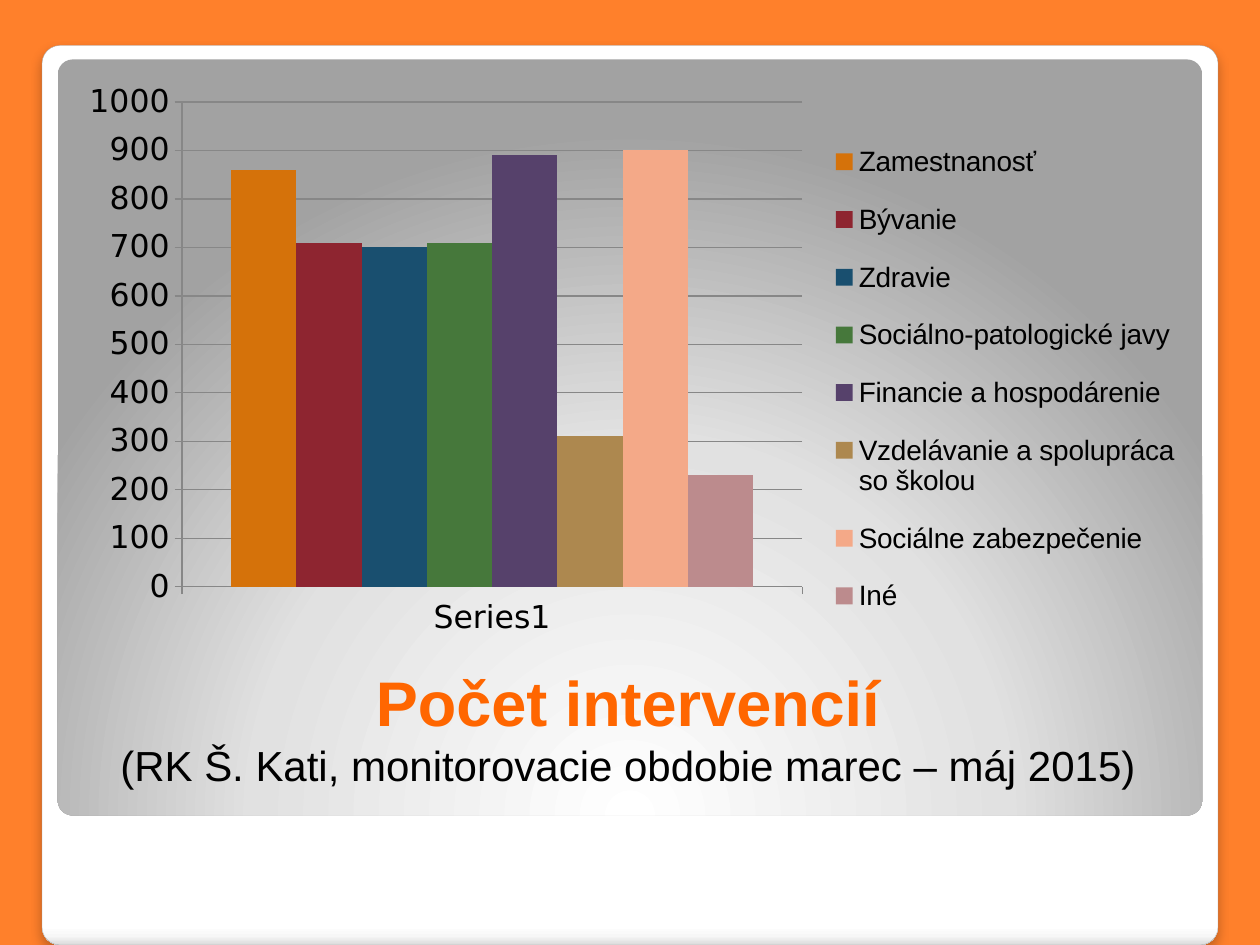
from lxml import etree
from pptx import Presentation
from pptx.chart.data import CategoryChartData
from pptx.dml.color import RGBColor
from pptx.enum.chart import XL_CHART_TYPE, XL_LEGEND_POSITION, XL_TICK_MARK
from pptx.enum.shapes import MSO_SHAPE
from pptx.enum.text import MSO_ANCHOR, MSO_AUTO_SIZE, PP_ALIGN
from pptx.oxml.ns import qn
from pptx.util import Pt

COLUMNS = XL_CHART_TYPE.COLUMN_CLUSTERED
LEGEND_RIGHT = XL_LEGEND_POSITION.RIGHT
TICK_OUTSIDE = XL_TICK_MARK.OUTSIDE
ROUNDED = MSO_SHAPE.ROUNDED_RECTANGLE
BOTTOM = MSO_ANCHOR.BOTTOM
NO_FIT = MSO_AUTO_SIZE.NONE
CENTER = PP_ALIGN.CENTER

BACKGROUND = RGBColor(0xFF, 0x80, 0x2B)
ORANGE = RGBColor(0xFF, 0x66, 0x00)
BLACK = RGBColor(0x00, 0x00, 0x00)
WHITE = RGBColor(0xFF, 0xFF, 0xFF)
FRAME_LINE = RGBColor(0xA4, 0xA4, 0xA4)
GRID_LINE = RGBColor(0x87, 0x87, 0x87)

FRAME_STOPS = [(0, WHITE), (98, WHITE), (99, RGBColor(0xF7, 0xF7, 0xF7)),
               (100, RGBColor(0xDA, 0xDA, 0xDA))]
PANEL_STOPS = [(0, WHITE), (55, RGBColor(0xE1, 0xE1, 0xE1)),
               (100, RGBColor(0xA2, 0xA2, 0xA2))]

INTERVENTIONS = [
    ("Zamestnanosť", 860, RGBColor(0xD5, 0x72, 0x0A)),
    ("Bývanie", 710, RGBColor(0x8E, 0x25, 0x30)),
    ("Zdravie", 700, RGBColor(0x19, 0x4F, 0x6F)),
    ("Sociálno-patologické javy", 710, RGBColor(0x46, 0x78, 0x3B)),
    ("Financie a hospodárenie", 890, RGBColor(0x56, 0x41, 0x6B)),
    ("Vzdelávanie a spolupráca so školou", 310, RGBColor(0xAD, 0x88, 0x4F)),
    ("Sociálne zabezpečenie", 900, RGBColor(0xF4, 0xA9, 0x88)),
    ("Iné", 230, RGBColor(0xBC, 0x8B, 0x8D)),
]


def add_node(parent, tag, **attributes):
    values = {name: str(value) for name, value in attributes.items()}
    return etree.SubElement(parent, qn(tag), values)


def add_color(parent, color, alpha=100):
    node = add_node(parent, "a:srgbClr", val=color)
    if alpha < 100:
        add_node(node, "a:alpha", val=alpha * 1000)


def set_gradient(shape, stops, focus=None):
    """Vertical gradient, or a circular one around the focus rectangle."""
    shape.fill.gradient()
    gradient = shape.element.spPr.find(qn("a:gradFill"))
    for child in list(gradient):
        gradient.remove(child)
    stop_list = add_node(gradient, "a:gsLst")
    for position, color in stops:
        add_color(add_node(stop_list, "a:gs", pos=position * 1000), color)
    if focus:
        circle = add_node(gradient, "a:path", path="circle")
        edges = {side: part * 1000 for side, part in zip("ltrb", focus)}
        add_node(circle, "a:fillToRect", **edges)
    else:
        add_node(gradient, "a:lin", ang=90 * 60000, scaled=0)


def add_rounded_box(page, box, stops, focus=None):
    shape = page.shapes.add_shape(ROUNDED, *map(Pt, box))
    shape.adjustments[0] = 0.02
    shape.shadow.inherit = False
    shape.line.fill.background()
    set_gradient(shape, stops, focus)
    return shape


def add_frame(page, box):
    frame = add_rounded_box(page, box, FRAME_STOPS)
    frame.line.color.rgb = FRAME_LINE
    frame.line.width = Pt(0.16)
    effects = frame.element.spPr.find(qn("a:effectLst"))
    shadow = add_node(effects, "a:outerShdw", blurRad=Pt(6), dist=Pt(4),
                      dir=90 * 60000, algn="tl", rotWithShape=0)
    add_color(shadow, BLACK, alpha=25)


def format_font(font, size, name="Arial", color=BLACK, bold=False):
    font.size = Pt(size)
    font.name = name
    font.color.rgb = color
    font.bold = bold


def add_text(para, text, **style):
    span = para.add_run()
    span.text = text
    format_font(span.font, **style)


def place_title(page, box):
    title = page.shapes.title
    title.left, title.top, title.width, title.height = map(Pt, box)
    frame = title.text_frame
    frame.word_wrap = True
    frame.auto_size = NO_FIT
    frame.vertical_anchor = BOTTOM
    para = frame.paragraphs[0]
    para.alignment = CENTER
    para.line_spacing = 1.0
    add_text(para, "Počet intervencií", size=36, color=ORANGE, bold=True)
    para.add_line_break()
    add_text(para, "(RK Š. Kati, monitorovacie obdobie marec – máj 2015)", size=24)


def set_layout(element, after, box, inner=False):
    """Fix a chart part at fractions of the chart area."""
    for old in element.findall(qn("c:layout")):
        element.remove(old)
    layout = etree.Element(qn("c:layout"))
    manual = add_node(layout, "c:manualLayout")
    if inner:
        add_node(manual, "c:layoutTarget", val="inner")
    for mode in ("xMode", "yMode"):
        add_node(manual, "c:" + mode, val="edge")
    for side, part in zip("xywh", box):
        add_node(manual, "c:" + side, val=part)
    if after is None:
        element.insert(0, layout)
    else:
        after.addnext(layout)


def add_intervention_chart(page, box):
    data = CategoryChartData()
    data.categories = ["Series1"]
    for name, count, _ in INTERVENTIONS:
        data.add_series(name, [count])
    chart = page.shapes.add_chart(COLUMNS, *map(Pt, box), data).chart
    chart.has_title = False
    format_font(chart.font, 18, name="DejaVu Sans")

    # Columns
    plot = chart.plots[0]
    plot.gap_width = 150
    plot.overlap = 0
    plot.vary_by_categories = False
    for series, (_, _, color) in zip(plot.series, INTERVENTIONS):
        series.format.fill.solid()
        series.format.fill.fore_color.rgb = color

    # Axes
    values = chart.value_axis
    values.minimum_scale, values.maximum_scale, values.major_unit = 0, 1000, 100
    values.has_major_gridlines = True
    for axis in (chart.category_axis, values):
        axis.major_tick_mark = TICK_OUTSIDE
    for part in (chart.category_axis, values, values.major_gridlines):
        part.format.line.color.rgb = GRID_LINE
        part.format.line.width = Pt(0.75)

    # Legend
    chart.has_legend = True
    legend = chart.legend
    legend.position = LEGEND_RIGHT
    legend.include_in_layout = False
    format_font(legend.font, 16)

    plot_area = chart.element.find(".//" + qn("c:plotArea"))
    set_layout(plot_area, None, (0.1, 0.05, 0.55, 0.84), inner=True)
    legend_part = chart.element.find(".//" + qn("c:legend"))
    set_layout(legend_part, legend_part.find(qn("c:legendPos")),
               (0.67, 0.08, 0.32, 0.9))


def build_slide(deck):
    page = deck.slides.add_slide(deck.slide_layouts[5])
    page.background.fill.solid()
    page.background.fill.fore_color.rgb = BACKGROUND
    add_frame(page, (24, 26, 672, 514))
    add_rounded_box(page, (33, 34, 654, 432), PANEL_STOPS, focus=(50, 175, 50, -75))
    add_intervention_chart(page, (39.6, 41.8, 644.4, 329.8))
    place_title(page, (36.7, 372.2, 644.4, 82.8))
    # Bring the title in front of the boxes
    page.shapes.element.append(page.shapes.title.element)


def main():
    deck = Presentation()
    deck.slide_width, deck.slide_height = Pt(720), Pt(540)
    build_slide(deck)
    deck.save("out.pptx")


if __name__ == "__main__":
    main()
